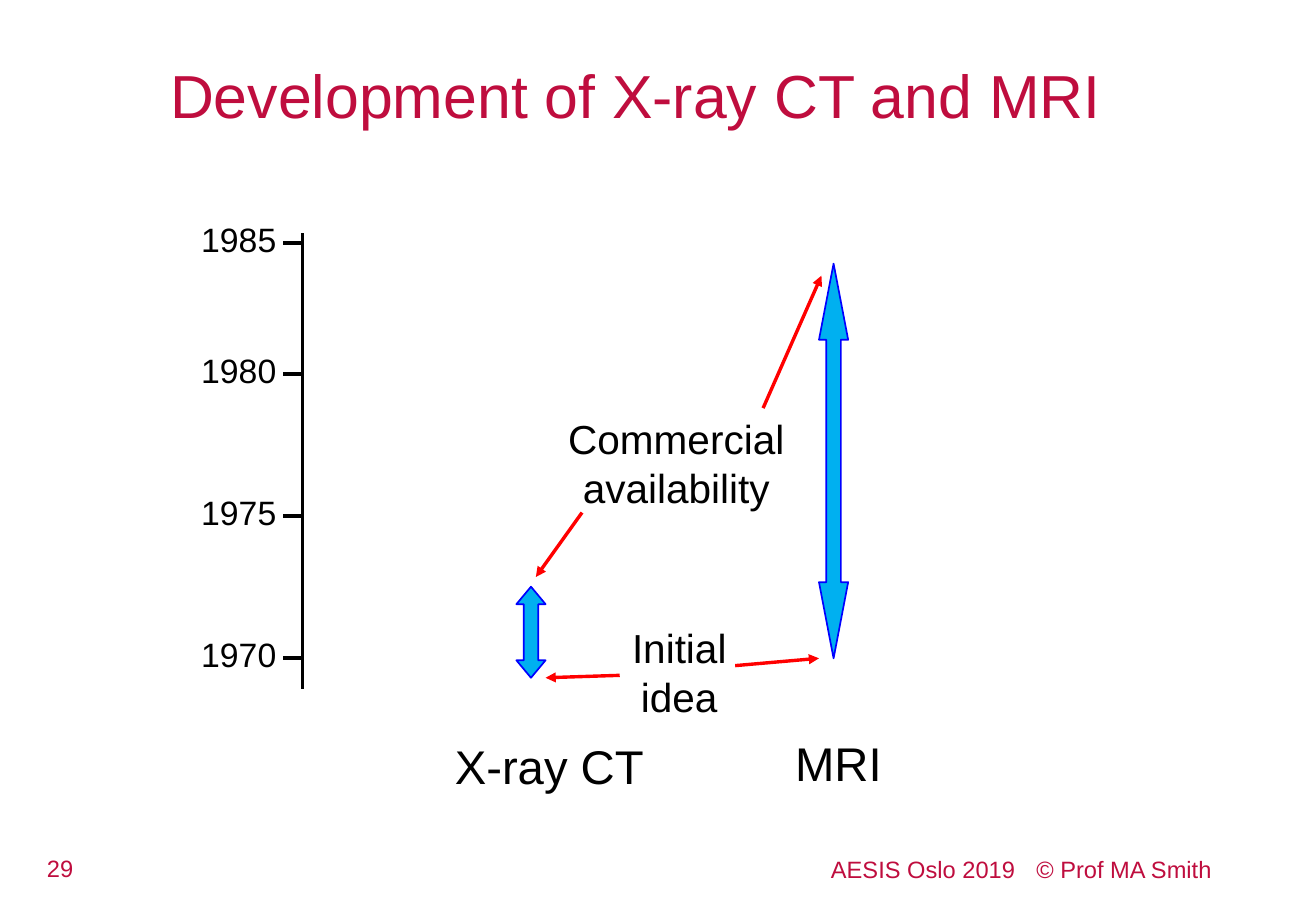
from lxml import etree
from pptx import Presentation
from pptx.dml.color import RGBColor
from pptx.enum.shapes import MSO_CONNECTOR, MSO_SHAPE
from pptx.enum.text import MSO_ANCHOR, PP_ALIGN
from pptx.oxml.ns import qn
from pptx.util import Inches, Pt

STRAIGHT = MSO_CONNECTOR.STRAIGHT
UP_DOWN_ARROW = MSO_SHAPE.UP_DOWN_ARROW
LEFT, CENTER = PP_ALIGN.LEFT, PP_ALIGN.CENTER
TOP, MIDDLE = MSO_ANCHOR.TOP, MSO_ANCHOR.MIDDLE

CRIMSON, BLACK, RED = "BF0D3E", "000000", "FF0000"
SKY, BLUE = "00B0F0", "0000FF"


def color(value):
    return RGBColor.from_string(value)


def set_font(paragraph, size, value):
    paragraph.font.name = "Arial"
    paragraph.font.size = Pt(size)
    paragraph.font.color.rgb = color(value)


def add_text(slide, box, text, size, value=BLACK, align=CENTER, anchor=TOP):
    shape = slide.shapes.add_textbox(*map(Inches, box))
    frame = shape.text_frame
    frame.word_wrap = True
    frame.vertical_anchor = anchor
    paragraph = frame.paragraphs[0]
    paragraph.text = text
    paragraph.alignment = align
    set_font(paragraph, size, value)
    return paragraph


def add_line(slide, start, end, value=BLACK, width=2.25, arrow=False):
    line = slide.shapes.add_connector(STRAIGHT, *map(Inches, (*start, *end)))
    line.line.color.rgb = color(value)
    line.line.width = Pt(width)
    if arrow:
        outline = line.line._get_or_add_ln()
        etree.SubElement(outline, qn("a:tailEnd"), type="triangle")
    etree.SubElement(line._element.spPr, qn("a:effectLst"))


def add_title(slide, box):
    title = slide.shapes.title
    title.left, title.top, title.width, title.height = map(Inches, box)
    frame = title.text_frame
    frame.margin_left = 0
    frame.vertical_anchor = MIDDLE
    paragraph = frame.paragraphs[0]
    paragraph.text = "Development of X-ray CT and MRI"
    paragraph.alignment = LEFT
    set_font(paragraph, 36, CRIMSON)


def add_year_axis(slide, box, ticks):
    """Draw the axis on the right edge of the box, with ticks at (year, offset)."""
    left, top, width, height = box
    axis = left + width
    add_line(slide, (axis, top), (axis, top + height))
    for year, offset in ticks:
        y = top + offset
        add_text(slide, (left, y - 0.25, width, 0.44), year, 20)
        add_line(slide, (axis - 0.16, y), (axis, y))


def add_period(slide, box, head_length):
    """Draw a double arrow whose head length is a share of its width."""
    arrow = slide.shapes.add_shape(UP_DOWN_ARROW, *map(Inches, box))
    arrow.shadow.inherit = False
    arrow.fill.solid()
    arrow.fill.fore_color.rgb = color(SKY)
    arrow.line.color.rgb = color(BLUE)
    arrow.line.width = Pt(1)
    # The library's adjustment names for this preset repeat adj1, so set both here.
    guides = arrow._element.spPr.find(qn("a:prstGeom")).find(qn("a:avLst"))
    for guide in list(guides):
        guides.remove(guide)
    for name, share in (("adj1", 0.5), ("adj2", head_length)):
        formula = f"val {round(share * 100000)}"
        etree.SubElement(guides, qn("a:gd"), name=name, fmla=formula)


def add_milestone(slide, box, text, pointers):
    """Place a label and its pointers, given relative to the box corner."""
    left, top = box[:2]
    add_text(slide, box, text, 24)
    for x1, y1, x2, y2 in pointers:
        add_line(slide, (left + x1, top + y1), (left + x2, top + y2), RED, 2, True)


def add_footer(slide, box):
    left, top, width, height = box
    add_text(slide, (left, top, 0.71, 0.34), "29", 14, CRIMSON)
    credit_width = 3.64
    credit_box = (left + width - credit_width, top + 0.08, credit_width, height - 0.08)
    credit = add_text(slide, credit_box, "AESIS Oslo 2019\t© Prof MA Smith",
                      14, CRIMSON, LEFT, MIDDLE)
    credit.line_spacing = 0.6
    tab_list = etree.Element(qn("a:tabLst"))
    etree.SubElement(tab_list, qn("a:tab"), pos=str(Inches(1.69)), algn="l")
    credit._p.pPr.find(qn("a:defRPr")).addprevious(tab_list)


def main():
    presentation = Presentation()
    presentation.slide_width = Inches(10.83)
    presentation.slide_height = Inches(7.5)
    slide = presentation.slides.add_slide(presentation.slide_layouts[5])

    add_title(slide, (1.4, 0.36, 8.18, 0.83))
    ticks = [("1985", 0.08), ("1980", 1.16), ("1975", 2.33), ("1970", 3.5)]
    add_year_axis(slide, (1.44, 1.92, 1.05, 3.75), ticks)
    add_period(slide, (4.25, 4.83, 0.24, 0.75), 0.6)
    add_period(slide, (6.74, 2.17, 0.24, 3.25), 2.61)
    add_milestone(slide, (5.03, 5.08, 1.12, 0.91), "Initial idea",
                  [(0.07, 0.48, -0.54, 0.5), (1.02, 0.4, 1.71, 0.34)])
    add_milestone(slide, (4.56, 3.36, 2.01, 0.91), "Commercial availability",
                  [(0.23, 0.86, -0.15, 1.39), (1.72, 0, 2.2, -1.09)])
    add_text(slide, (3.62, 6.02, 1.8, 0.57), "X-ray CT", 28)
    add_text(slide, (6.42, 6, 0.96, 0.57), "MRI", 28)
    add_footer(slide, (0.14, 6.98, 10.24, 0.34))

    presentation.save("out.pptx")


if __name__ == "__main__":
    main()
